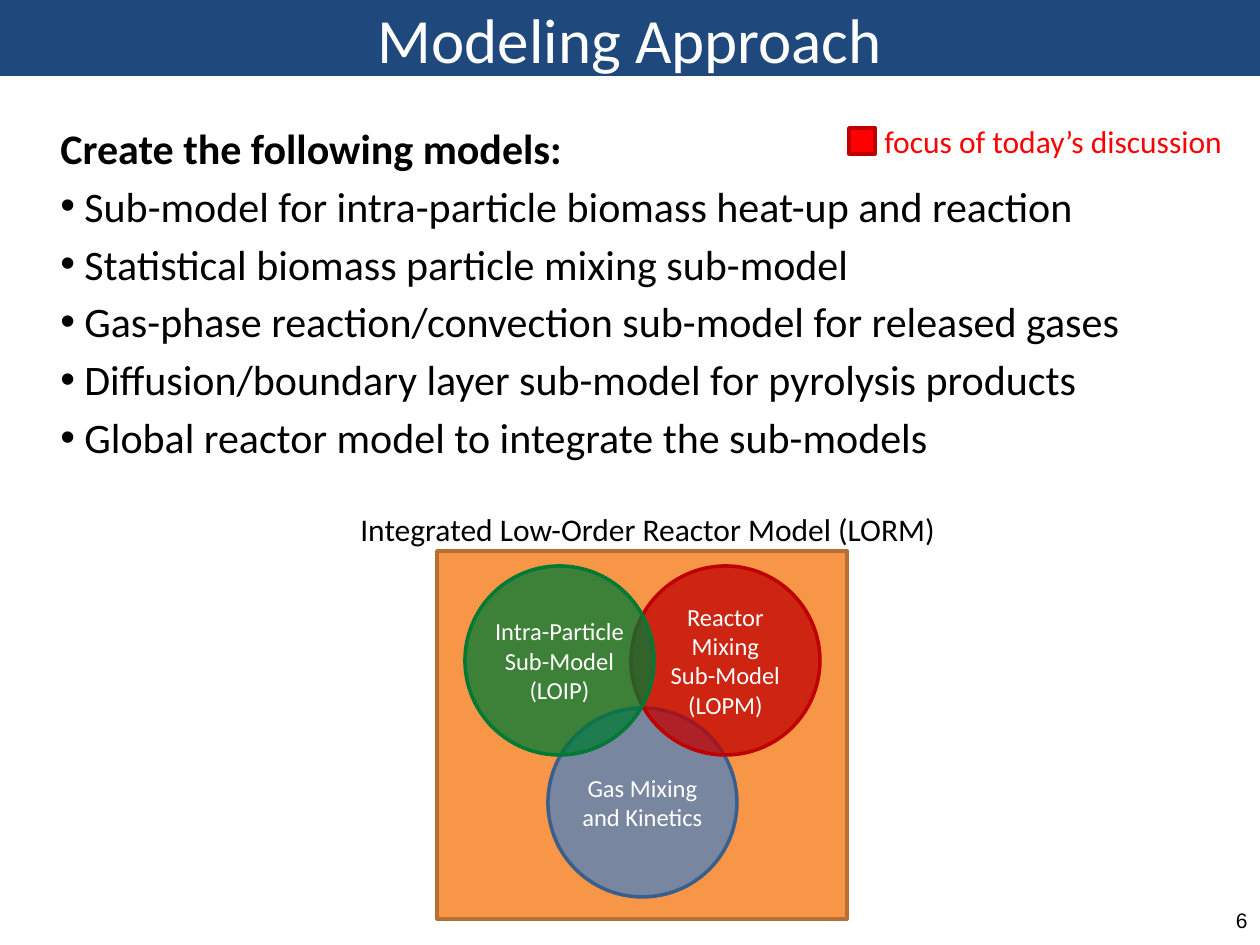
from pptx import Presentation
from pptx.dml.color import RGBColor
from pptx.enum.shapes import MSO_SHAPE
from pptx.enum.text import MSO_ANCHOR, MSO_AUTO_SIZE, PP_ALIGN
from pptx.oxml.ns import qn
from pptx.util import Pt
from lxml.etree import SubElement

SCALE = 914400 / 126  # EMU per px


def px(n):
    return round(n * SCALE)


def rgb(code):
    return RGBColor.from_string(code)


def write(shape, text, size=14, color="FFFFFF", font="Calibri",
          align=PP_ALIGN.CENTER, anchor=MSO_ANCHOR.MIDDLE, wrap=True,
          inset=None, bold=False, before=0):
    """Fill a shape with one paragraph per line of text."""
    frame = shape.text_frame
    frame.text = text
    frame.auto_size = MSO_AUTO_SIZE.NONE
    frame.word_wrap = wrap
    frame.vertical_anchor = anchor
    if inset is not None:
        frame.margin_left = frame.margin_right = px(inset)
        frame.margin_top = frame.margin_bottom = px(inset)
    for para in frame.paragraphs:
        para.alignment = align
        para.space_before = Pt(before)
        face = para.runs[0].font
        face.name, face.size, face.bold = font, Pt(size), bold
        face.color.rgb = rgb(color)
    return frame


def label(slide, box, text, **style):
    return write(slide.shapes.add_textbox(*map(px, box)), text, **style)


def block(slide, kind, box, fill, line, alpha=None):
    shape = slide.shapes.add_shape(kind, *map(px, box))
    shape.shadow.inherit = False
    shape.fill.solid()
    shape.fill.fore_color.rgb = rgb(fill)
    shape.line.color.rgb = rgb(line)
    shape.line.width = Pt(2)
    if alpha:
        tint = shape._element.spPr.find(qn("a:solidFill"))[0]
        SubElement(tint, qn("a:alpha")).set("val", str(alpha * 1000))
    return shape


def banner(slide, box, text):
    title = slide.shapes.title
    title.left, title.top, title.width, title.height = map(px, box)
    title.fill.solid()
    title.fill.fore_color.rgb = rgb("1F497D")
    write(title, text, size=36)


def points(slide, box, head, items):
    frame = label(slide, box, "\n".join([head, *items]), size=24,
                  color="000000", align=PP_ALIGN.LEFT,
                  anchor=MSO_ANCHOR.TOP, before=4.3)
    frame.paragraphs[0].runs[0].font.bold = True
    for para in frame.paragraphs[1:]:
        props = para._p.get_or_add_pPr()
        props.set("marL", str(px(24)))
        props.set("indent", str(px(-24)))
        SubElement(props, qn("a:buFont")).set("typeface", "Arial")
        SubElement(props, qn("a:buChar")).set("char", "•")


def legend(slide, box, text):
    x, y, w, h = box
    block(slide, MSO_SHAPE.RECTANGLE, (x, y + 12, 26, 26), "FF0000", "C00000")
    label(slide, (x + 23, y, w - 23, h), text, size=18, color="FF0000",
          align=PP_ALIGN.LEFT, anchor=MSO_ANCHOR.TOP, wrap=False)


def venn(slide, box, caption):
    x, y, w, h = box
    block(slide, MSO_SHAPE.RECTANGLE, box, "F79646", "B76F34")
    # Two circles on top, one centred below, drawn from back to front
    size, left, right, top, low = 189, 28, 194, 15, 157
    circles = [
        ((left + right) // 2, low, "4F81BD", "3A5F8C",
         "Gas Mixing and Kinetics"),
        (right, top, "C00000", "C00000",
         "Reactor\nMixing\nSub-Model\n(LOPM)"),
        (left, top, "007934", "007934", "Intra-Particle\nSub-Model (LOIP)"),
    ]
    for dx, dy, fill, line, text in circles:
        disc = block(slide, MSO_SHAPE.OVAL, (x + dx, y + dy, size, size),
                     fill, line, alpha=75)
        write(disc, text, inset=0)
    label(slide, (x - 89, y - 47, 607, 50), caption, size=18, color="000000",
          align=PP_ALIGN.LEFT, anchor=MSO_ANCHOR.TOP, wrap=False)


def main():
    deck = Presentation()
    deck.slide_width, deck.slide_height = px(1260), px(945)
    slide = deck.slides.add_slide(deck.slide_layouts[5])

    banner(slide, (0, 0, 1260, 76), "Modeling Approach")
    points(slide, (48, 116, 1165, 388), "Create the following models:", [
        "Sub-model for intra-particle biomass heat-up and reaction",
        "Statistical biomass particle mixing sub-model",
        "Gas-phase reaction/convection sub-model for released gases",
        "Diffusion/boundary layer sub-model for pyrolysis products",
        "Global reactor model to integrate the sub-models",
    ])
    legend(slide, (849, 116, 390, 50), "focus of today’s discussion")
    venn(slide, (437, 551, 410, 368),
         "Integrated Low-Order Reactor Model (LORM)")
    # Page number
    label(slide, (966, 895, 294, 50), "6", size=12, color="000000",
          font="Arial", align=PP_ALIGN.RIGHT)
    deck.save("out.pptx")


if __name__ == "__main__":
    main()
